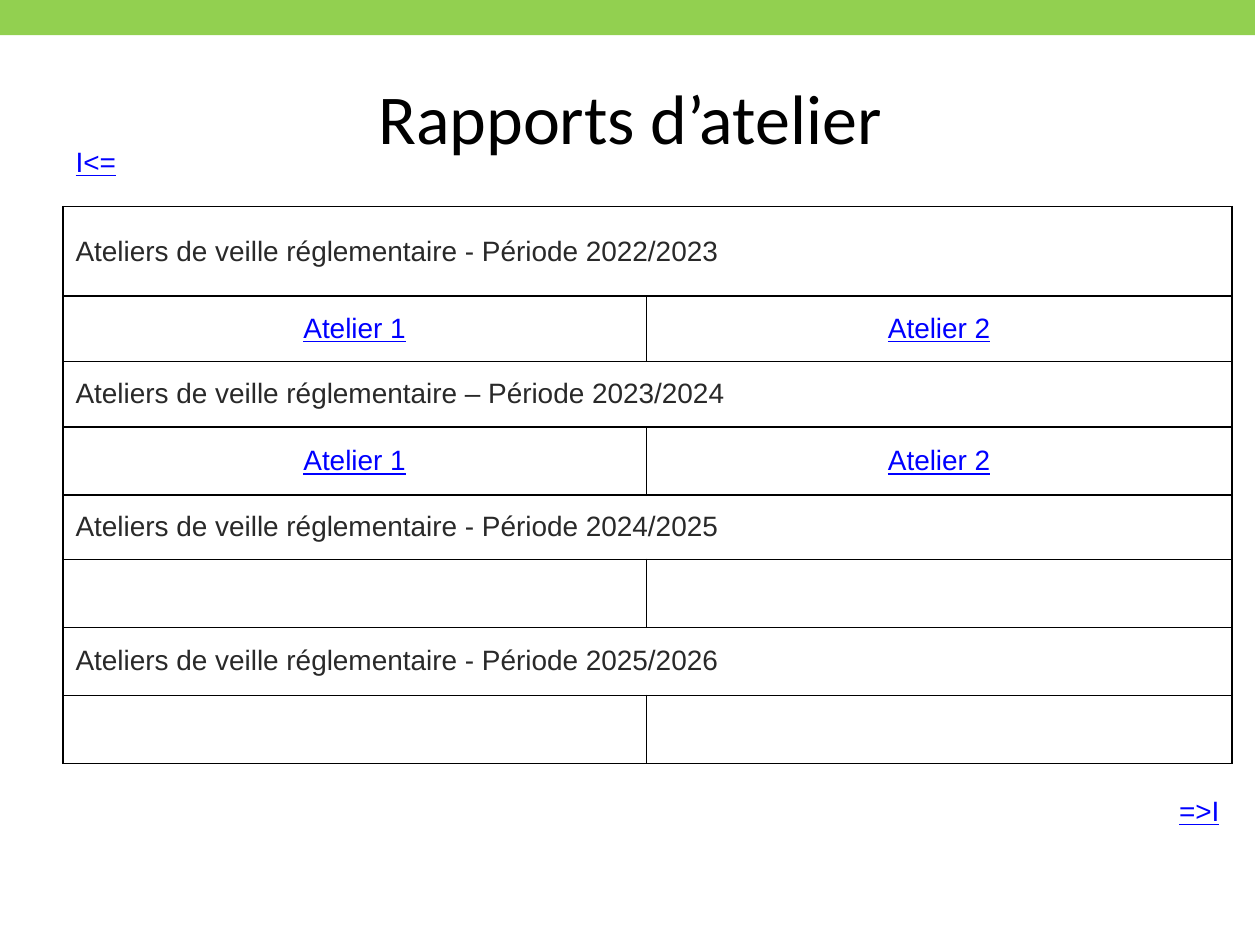
import lxml.etree
import pptx
import pptx.dml.color
import pptx.enum.shapes
import pptx.enum.text
import pptx.oxml.ns
import pptx.util

COLORS = {"band": "92D050", "title": "000000", "text": "292929",
          "link": "0000FF", "border": "000000"}
WIDTH, HEIGHT = 10, 7.5
COLUMNS = [1.32, 0.54, 0.78, 1.6, 0.13, 0.26, 2, 0.54, 0.79, 1.32]
ROWS = [0.7, 0.71, 0.52, 0.52, 0.54, 0.51, 0.54, 0.54, 0.54, 0.77]
PERIODS = [
    ("Ateliers de veille réglementaire - Période 2022/2023", "Atelier 1", "Atelier 2"),
    ("Ateliers de veille réglementaire – Période 2023/2024", "Atelier 1", "Atelier 2"),
    ("Ateliers de veille réglementaire - Période 2024/2025", "", ""),
    ("Ateliers de veille réglementaire - Période 2025/2026", "", ""),
]
NO_STYLE = "{2D5ABB26-0587-4C30-8999-92F81FD0307C}"
ALIGN = pptx.enum.text.PP_ALIGN


def rgb(name):
    return pptx.dml.color.RGBColor.from_string(COLORS[name])


def inches(*lengths):
    return [pptx.util.Inches(length) for length in lengths]


def set_font(para, family, size, color, underline=False):
    para.font.name = family
    para.font.size = pptx.util.Pt(size)
    para.font.color.rgb = rgb(color)
    para.font.underline = underline


def add_band(page, box):
    band = page.shapes.add_shape(pptx.enum.shapes.MSO_SHAPE.RECTANGLE, *inches(*box))
    band.shadow.inherit = False
    band.fill.solid()
    band.fill.fore_color.rgb = rgb("band")
    band.line.fill.background()


def fill_title(page, box, text):
    title = page.shapes.title
    title.left, title.top, title.width, title.height = inches(*box)
    title.text_frame.vertical_anchor = pptx.enum.text.MSO_ANCHOR.MIDDLE
    title.text_frame.text = text
    para = title.text_frame.paragraphs[0]
    para.alignment = ALIGN.CENTER
    set_font(para, "Calibri", 40, "title")


def set_borders(cell, sides):
    """Draw the given sides (in the order L, R, T, B), then clear the fill."""
    properties = cell._tc.get_or_add_tcPr()
    for side in "LRTB":
        line = lxml.etree.SubElement(properties, pptx.oxml.ns.qn("a:ln" + side))
        if side in sides:
            line.set("w", str(pptx.util.Pt(1)))
            fill = lxml.etree.SubElement(line, pptx.oxml.ns.qn("a:solidFill"))
            color = lxml.etree.SubElement(fill, pptx.oxml.ns.qn("a:srgbClr"))
            color.set("val", COLORS["border"])
        else:
            lxml.etree.SubElement(line, pptx.oxml.ns.qn("a:noFill"))
    cell.fill.background()


def fill_row(table, row, parts, sides):
    """Each part is (columns spanned, text, alignment, colour)."""
    column = 0
    for span, text, alignment, color in parts:
        last = column + span - 1
        for index in range(column, last + 1):
            hidden = ("L" if index > column else "") + ("R" if column < index < last else "")
            set_borders(table.cell(row, index), [s for s in sides if s not in hidden])
        cell = table.cell(row, column)
        if span > 1:
            cell.merge(table.cell(row, last))
        cell.vertical_anchor = pptx.enum.text.MSO_ANCHOR.MIDDLE
        cell.text = text
        para = cell.text_frame.paragraphs[0]
        para.alignment = alignment
        set_font(para, "Arial", 16, color, underline=color == "link")
        column += span


def blanks(*spans):
    return [(span, "", ALIGN.LEFT, "text") for span in spans]


def add_reports(page, box):
    frame = page.shapes.add_table(len(ROWS), len(COLUMNS), *inches(*box))
    table = frame.table
    table.first_row = table.horz_banding = False
    frame._element.find(".//" + pptx.oxml.ns.qn("a:tableStyleId")).text = NO_STYLE
    for column, width in zip(table.columns, COLUMNS):
        column.width = pptx.util.Inches(width)
    for row, height in zip(table.rows, ROWS):
        row.height = pptx.util.Inches(height)

    # Navigation rows, open on the outside
    fill_row(table, 0, [(1, "I<=", ALIGN.LEFT, "link")] + blanks(2, 2, 2, 2, 1), "B")
    fill_row(table, len(ROWS) - 1,
             blanks(1, 1, 2, 4, 1) + [(1, "=>I", ALIGN.RIGHT, "link")], "T")

    # One heading row and one workshop row per period
    for number, (heading, first, second) in enumerate(PERIODS):
        row = 1 + 2 * number
        fill_row(table, row, [(10, heading, ALIGN.LEFT, "text")], "LRTB")
        fill_row(table, row + 1, [(6, first, ALIGN.CENTER, "link"),
                                  (4, second, ALIGN.CENTER, "link")], "LRTB")


def main():
    deck = pptx.Presentation()
    deck.slide_width, deck.slide_height = inches(WIDTH, HEIGHT)
    page = deck.slides.add_slide(deck.slide_layouts[5])
    add_band(page, (0, 0, 9.96, 0.28))
    fill_title(page, (0.05 * WIDTH, 0.04 * HEIGHT, 0.9 * WIDTH, HEIGHT / 6),
               "Rapports d’atelier")
    add_reports(page, (0.05 * WIDTH, 0.94, sum(COLUMNS), sum(ROWS)))
    deck.save("out.pptx")


if __name__ == "__main__":
    main()
